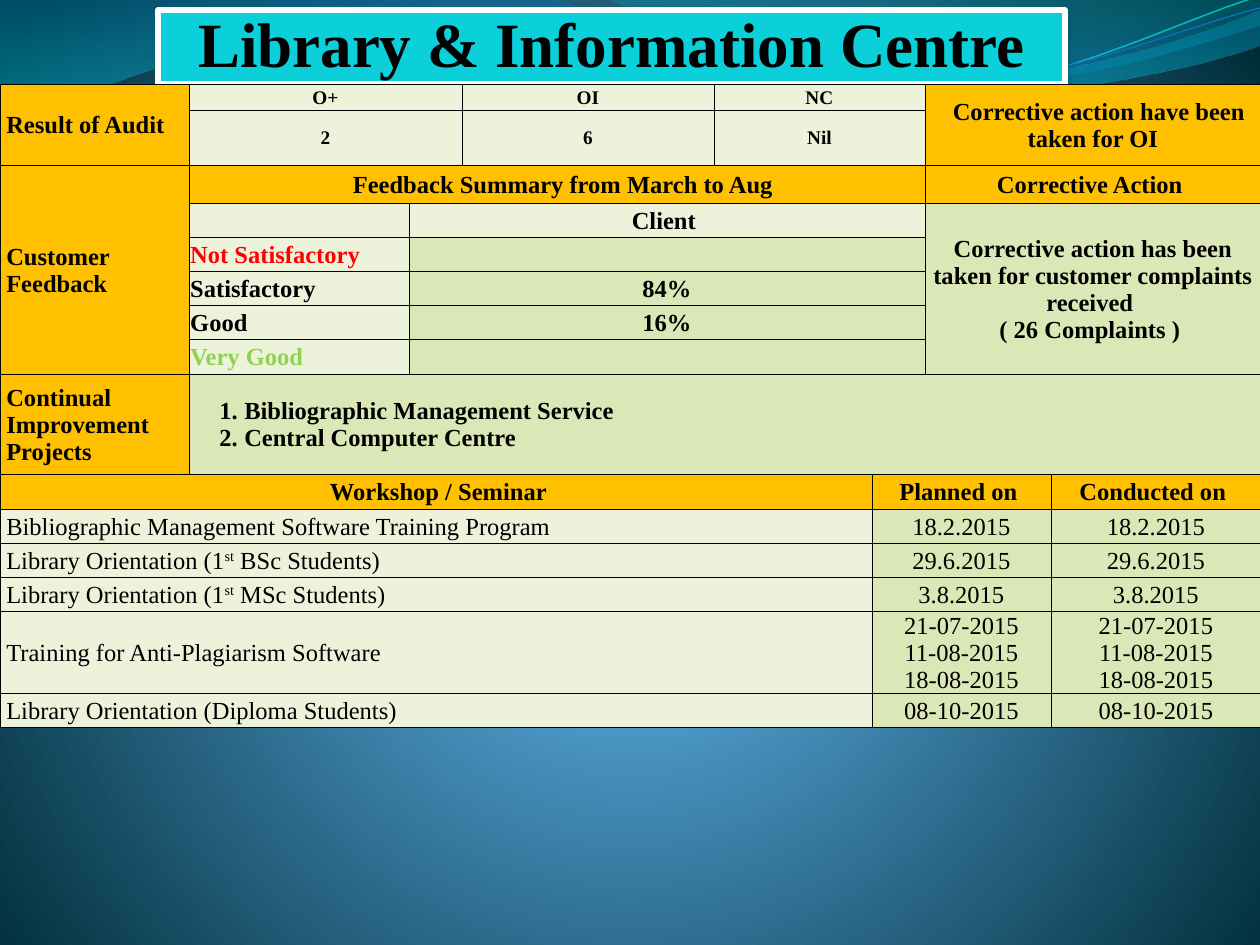
import math

from lxml import etree
from pptx import Presentation, oxml
from pptx import util as u
from pptx.dml.color import RGBColor
from pptx.enum import text
from pptx.oxml import ns

PX = 914400 / 126
FONT = "Times New Roman"
COLORS = {
    "black": "000000", "white": "FFFFFF", "red": "FF0000", "green": "92D050",
    "gold": "FFC000", "pale": "EDF3DB", "sage": "DBE7B6", "cyan": "0BD0D9",
    "teal line": "0AB8BF", "blue line": "0F6FC6", "shadow": "024B4E",
    "sky": "4AA0D6", "mid blue": "4C98C7", "night": "002C38",
    "wave blue": "0074A1", "wave aqua": "00C6CF",
    "wave teal": "00A1A9", "wave azure": "008BBF",
}
RGB = {name: RGBColor.from_string(value) for name, value in COLORS.items()}
XMLNS = ns.nsdecls("a")


def gradient(stops, direction):
    marks = "".join(
        f'<a:gs pos="{at * 1000}"><a:srgbClr val="{COLORS[color]}">'
        f'<a:alpha val="{alpha * 1000}"/></a:srgbClr></a:gs>'
        for at, color, alpha in stops)
    return oxml.parse_xml(
        f'<a:gradFill {XMLNS} rotWithShape="1"><a:gsLst>{marks}</a:gsLst>{direction}</a:gradFill>')


def add_curve(page, start, segments, close, pivot=(0, 0), tilt=0):
    flat = [start] + [segment[i:i + 2] for segment in segments for i in range(0, len(segment), 2)]
    cos, sin = math.cos(math.radians(tilt)), math.sin(math.radians(tilt))
    px, py = pivot
    points = [((px + (x - px) * cos - (y - py) * sin) * PX,
               (py + (x - px) * sin + (y - py) * cos) * PX) for x, y in flat]
    builder = page.shapes.build_freeform(*points[0])
    builder.add_line_segments(points[1:], close=close)
    shape = builder.convert_to_shape()
    shape.rotation = -tilt
    shape.shadow.inherit = False
    lines = iter(list(shape.element.iter(ns.qn("a:lnTo"))))
    for segment in segments:
        bend = next(lines)
        if len(segment) == 6:
            bend.addprevious(etree.Element(ns.qn("a:cubicBezTo")))
            curve = bend.getprevious()
            for line in (bend, next(lines), next(lines)):
                curve.append(line[0])
                line.getparent().remove(line)
    return shape


deck = Presentation()
deck.slide_width, deck.slide_height = u.Inches(10), u.Inches(7.5)
page = deck.slides.add_slide(deck.slide_layouts[5])

page.background.fill.solid()
backdrop = page.background.fill._xPr
backdrop.replace(backdrop[0], gradient(
    [(0, "sky", 100), (25, "mid blue", 100), (100, "night", 100)],
    '<a:path path="circle"><a:fillToRect l="10000" t="110000" r="10000" b="100000"/></a:path>'))

waves = [
    ((0, -1), [(554, -1), (600, 21, 837, 79, 955, 79), (1075, 79, 1207, 33, 1260, 11),
               (1261, 45), (1239, 55, 1096, 96, 940, 95), (784, 95, 481, 35, 324, 43),
               (163, 44, 58, 105, -1, 142), (0, -1)],
     [(0, "wave blue", 45), (100, "wave aqua", 55)]),
    ((604, -1), [(642, 14, 859, 78, 969, 82), (1079, 87, 1211, 40, 1260, 26),
                 (1260, 0), (604, -1)],
     [(0, "wave teal", 30), (80, "wave azure", 45)]),
]
strands = [
    ((0, 140), [(60, 117, 199, 72, 349, 66), (498, 59, 747, 112, 898, 101),
                (1050, 89, 1182, 19, 1257, -3)], (629, 72), "teal line", 0.85),
    ((0, 131), [(59, 121, 207, 77, 357, 71), (508, 64, 752, 105, 903, 95),
                (1053, 84, 1186, 26, 1260, 8)], (629, 74), "blue line", 0.75),
]
for start, segments, stops in waves:
    wave = add_curve(page, start, segments, True)
    wave.line.fill.background()
    wave.fill.solid()
    holder = wave.fill._xPr
    holder.replace(holder.find(ns.qn("a:solidFill")),
                   gradient(stops, '<a:lin ang="5400000" scaled="1"/>'))
for start, segments, pivot, color, width in strands:
    strand = add_curve(page, start, segments, False, pivot, 2.7)
    strand.fill.background()
    strand.line.color.rgb = RGB[color]
    strand.line.width = u.Pt(width)

title = page.shapes.title
page.shapes.element.append(title.element)
title.left, title.top, title.width, title.height = (int(n * PX) for n in (158, 10, 907, 74))
title.fill.solid()
title.fill.fore_color.rgb = RGB["cyan"]
title.line.color.rgb = RGB["white"]
title.line.width = u.Pt(3)
title.element.spPr.append(oxml.parse_xml(
    f'<a:effectLst {XMLNS}><a:outerShdw blurRad="57150" dist="38100" dir="5400000">'
    f'<a:srgbClr val="{COLORS["shadow"]}"><a:alpha val="48000"/></a:srgbClr>'
    '</a:outerShdw></a:effectLst>'))
box = title.text_frame
box.word_wrap = True
box.auto_size = text.MSO_AUTO_SIZE.NONE
box.vertical_anchor = text.MSO_ANCHOR.MIDDLE
box.margin_left = box.margin_right = box.margin_top = box.margin_bottom = int(PX)
para = box.paragraphs[0]
para.alignment = text.PP_ALIGN.CENTER
para.line_spacing = 0.9
span = para.add_run()
span.text = "Library & Information Centre"
span.font.name, span.font.size, span.font.bold = FONT, u.Pt(36), True
span.font.color.rgb = RGB["black"]

columns = [189, 220, 53, 252, 158, 53, 126, 210]
rows = [26, 55, 38, 34, 34, 34, 34, 35, 100, 35, 34, 34, 34, 82, 34]
frame = page.shapes.add_table(len(rows), len(columns), 0, int(84 * PX),
                              int(sum(columns) * PX), int(sum(rows) * PX))
table = frame.table
table.first_row = table.horz_banding = False
for column, width in zip(table.columns, columns):
    column.width = int(width * PX)
for row, height in zip(table.rows, rows):
    row.height = int(height * PX)
for cell in table.iter_cells():
    cell.margin_left = cell.margin_right = cell.margin_top = u.Inches(0.01)
    cell.margin_bottom = 0
    cell.vertical_anchor = text.MSO_ANCHOR.MIDDLE
    for side in ("lnL", "lnR", "lnT", "lnB"):
        cell._tc.get_or_add_tcPr().append(oxml.parse_xml(
            f'<a:{side} {XMLNS} w="6350"><a:solidFill><a:srgbClr val="{COLORS["black"]}"/>'
            f'</a:solidFill></a:{side}>'))
    cell.fill.solid()
    cell.fill.fore_color.rgb = RGB["pale"]

center = {"align": "CENTER"}
small = {"align": "CENTER", "size": 11}
plain = {"bold": False}
plain_center = {"align": "CENTER", "bold": False}
shifted = {"align": "CENTER", "indent": 12}
entries = [
    (0, 0, 2, 1, "gold", "Result of Audit", {}),
    (0, 6, 2, 2, "gold", "Corrective action have been taken for OI", shifted),
    (2, 0, 6, 1, "gold", "Customer Feedback", {}),
    (2, 1, 1, 5, "gold", "Feedback Summary from March to Aug", shifted),
    (2, 6, 1, 2, "gold", "Corrective Action ", center),
    (3, 1, 1, 1, "pale", "", {}),
    (3, 2, 1, 4, "pale", "Client ", center),
    (3, 6, 5, 2, "sage", "Corrective action has been taken for customer complaints received "
     "\n( 26 Complaints ) ", center),
    (8, 0, 1, 1, "gold", "Continual Improvement Projects", {}),
    (8, 1, 1, 7, "sage", "Bibliographic Management Service\nCentral Computer Centre",
     {"numbered": True}),
    (9, 0, 1, 5, "gold", "Workshop / Seminar", center),
    (9, 5, 1, 2, "gold", "Planned on ", center),
    (9, 7, 1, 1, "gold", "Conducted on ", center),
]
audit = [(1, 2, "O+", "2"), (3, 1, "OI", "6"), (4, 2, "NC", "Nil")]
for col, width, *values in audit:
    entries += [(row, col, 1, width, "pale", value, small) for row, value in enumerate(values)]
ratings = [("Not Satisfactory", "red", ""), ("Satisfactory", "black", "84%"),
           ("Good", "black", "16%"), ("Very Good", "green", "")]
for row, (rating, color, share) in enumerate(ratings, 4):
    entries += [(row, 1, 1, 1, "pale", rating, {"color": color}),
                (row, 2, 1, 4, "sage", share, center)]
workshops = [
    ("Bibliographic Management Software Training Program", "18.2.2015"),
    ("Library Orientation (1^st^ BSc Students)", "29.6.2015"),
    ("Library Orientation (1^st^ MSc Students)", "3.8.2015"),
    ("Training for Anti-Plagiarism Software", "21-07-2015\n11-08-2015\n18-08-2015"),
    ("Library Orientation (Diploma Students)", "08-10-2015"),
]
for row, (workshop, dates) in enumerate(workshops, 10):
    entries += [(row, 0, 1, 5, "pale", workshop, plain),
                (row, 5, 1, 2, "sage", dates, plain_center),
                (row, 7, 1, 1, "sage", dates, plain_center)]

for row, col, tall, wide, fill, words, style in entries:
    cell = table.cell(row, col)
    if tall * wide > 1:
        cell.merge(table.cell(row + tall - 1, col + wide - 1))
    cell.fill.fore_color.rgb = RGB[fill]
    if col == 0:
        cell.margin_left = u.Inches(0.05)
    for number, line in enumerate(words.split("\n")):
        box = cell.text_frame
        para = box.add_paragraph() if number else box.paragraphs[0]
        para.alignment = getattr(text.PP_ALIGN, style.get("align", "LEFT"))
        props = para._p.get_or_add_pPr()
        if "indent" in style:
            props.set("indent", str(int(style["indent"] * PX)))
        if "numbered" in style:
            props.set("marL", str(int(54 * PX)))
            props.set("indent", str(int(-25 * PX)))
            etree.SubElement(props, ns.qn("a:buAutoNum"), type="arabicPeriod")
        if not line:
            etree.SubElement(para._p, ns.qn("a:endParaRPr"), sz="1100")
            continue
        for part, wording in enumerate(line.split("^")):
            span = para.add_run()
            span.text = wording
            span.font.name = FONT
            span.font.size = u.Pt(style.get("size", 14))
            span.font.bold = style.get("bold", True)
            span.font.color.rgb = RGB[style.get("color", "black")]
            if part % 2:
                span._r.get_or_add_rPr().set("baseline", "30000")

deck.save("out.pptx")
